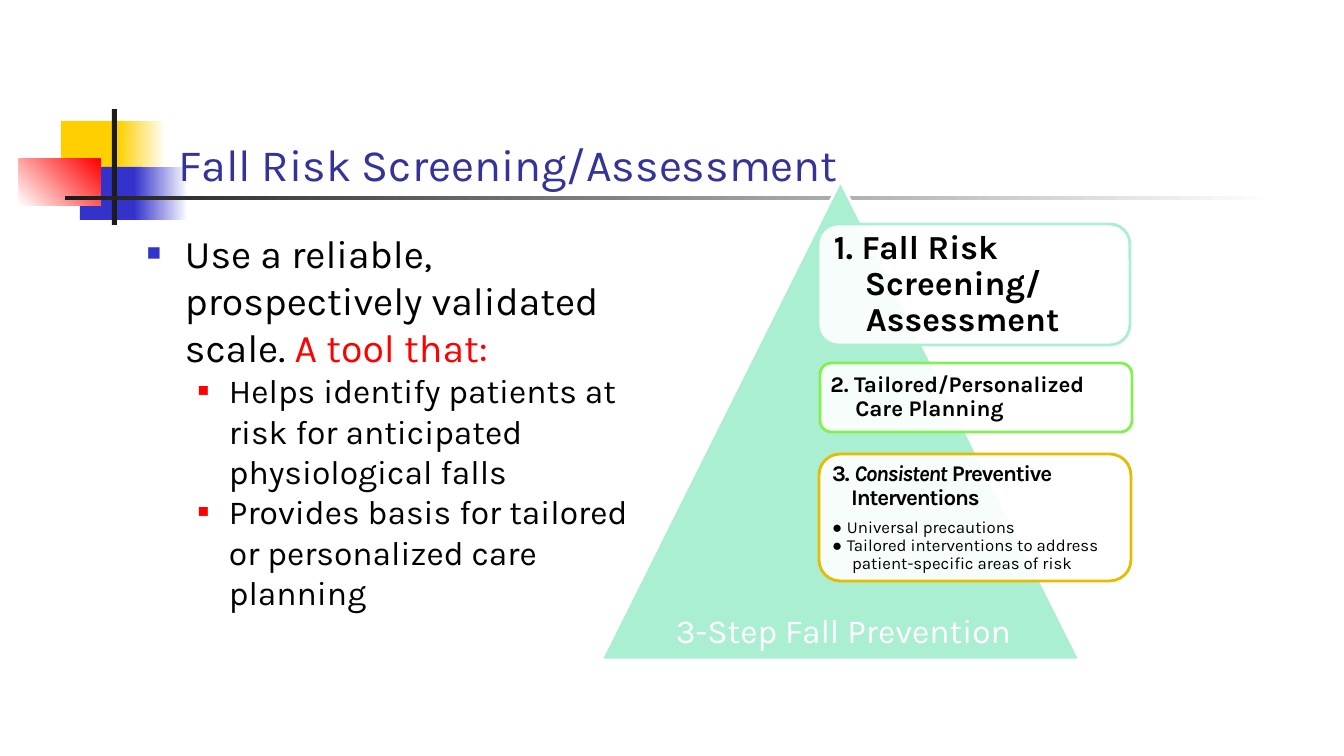
"""Build the fall risk screening and assessment slide."""
from dataclasses import dataclass

import pptx
import pptx.dml.color
import pptx.enum.shapes
import pptx.enum.text
import pptx.oxml
import pptx.oxml.ns
import pptx.util
from lxml import etree

SHAPE = pptx.enum.shapes.MSO_SHAPE
ALIGN = pptx.enum.text.PP_ALIGN
ANCHOR = pptx.enum.text.MSO_ANCHOR
qn = pptx.oxml.ns.qn
SCALE = 914400 / 100.8


@dataclass(frozen=True)
class Theme:
    font: str = "Karla"
    bullet_font: str = "Arial"
    white: str = "FFFFFF"
    black: str = "000000"
    charcoal: str = "1C1C1C"
    yellow: str = "FFCF01"
    blue: str = "3333CC"
    navy: str = "333399"
    red: str = "FF0000"
    mint: str = "AAEFD1"
    green: str = "83F051"
    gold: str = "E7BB01"
    title: int = 32
    lead: int = 28
    large: int = 24
    step: int = 16
    detail: int = 12
    outline: int = 2
    card_opacity: int = 90


T = Theme()

ORNAMENTS = [
    ((61, 121, 65, 52), [T.yellow], 0),
    ((118, 121, 48, 52), [T.yellow, T.white], 0),
    ((80, 167, 62, 53), [T.blue], 0),
    ((134, 167, 54, 53), [T.blue, T.white], 0),
    ((19, 159, 82, 47), [T.white, T.red], 45),
    ((112, 109, 5, 116), [T.charcoal], 0),
    ((65, 196, 1210, 4), [T.charcoal, T.white], 0),
]

TITLE = [{"runs": [("Fall Risk Screening/Assessment", {"color": T.navy})], "size": T.title}]

SUB_POINT = {"size": T.large, "indent": (82, -31), "bullet": (T.red, 55)}
GUIDANCE = [
    {"runs": [("Use a reliable, prospectively validated scale. ", {}),
              ("A tool that:", {"color": T.red})],
     "size": T.lead, "indent": (38, -38), "bullet": (T.blue, 60)},
    {"runs": [("Helps identify patients at risk for anticipated physiological falls", {})],
     **SUB_POINT},
    {"runs": [("Provides basis for tailored or personalized care planning", {})], **SUB_POINT},
]

BOLD = {"bold": True}
TIGHT = {"bold": True, "spacing": -80}
DOT = ("● ", {"font": T.bullet_font})
STEPS = [
    ((818, 224, 312, 121), T.mint, 10, [
        {"runs": [("1. Fall Risk Screening/", BOLD)],
         "size": T.large, "indent": (31, -31), "leading": 0.9},
        {"runs": [("Assessment", BOLD)],
         "size": T.large, "indent": (38, -6), "leading": 0.9},
    ]),
    ((820, 363, 312, 69), T.green, 7, [
        {"runs": [("2. Tailored/Personalized Care Planning", BOLD)],
         "size": T.step, "indent": (25, -25), "leading": 0.9},
    ]),
    ((819, 454, 312, 127), T.gold, 7, [
        {"runs": [("3. ", TIGHT), ("Consistent ", {**TIGHT, "italic": True}),
                  ("Preventive Interventions", TIGHT)],
         "size": T.step, "indent": (19, -19), "leading": 0.9, "after": 6},
        {"runs": [DOT, ("Universal precautions", {})], "size": T.detail, "leading": 0.9},
        {"runs": [DOT, ("Tailored interventions to address patient-specific areas of risk", {})],
         "size": T.detail, "indent": (20, -20), "leading": 0.9},
    ]),
]

PREVENTION = [{"runs": [("3-Step Fall Prevention", {"color": T.white})],
               "size": T.large, "align": ALIGN.CENTER}]


def px(length):
    return pptx.util.Emu(round(length * SCALE))


def rgb(code):
    return pptx.dml.color.RGBColor.from_string(code)


def add_block(slide, kind, box, colors, angle=0, outline=None):
    block = slide.shapes.add_shape(kind, *map(px, box))
    block.shadow.inherit = False
    if len(colors) == 1:
        block.fill.solid()
        block.fill.fore_color.rgb = rgb(colors[0])
    else:
        block.fill.gradient()
        block.fill.gradient_angle = angle
        for stop, color in zip(block.fill.gradient_stops, colors):
            stop.color.rgb = rgb(color)
    if outline:
        block.line.color.rgb = rgb(outline)
        block.line.width = pptx.util.Pt(T.outline)
    else:
        block.line.fill.background()
    return block


def set_bullet(props, color, percent):
    bullet_color = etree.SubElement(props, qn("a:buClr"))
    etree.SubElement(bullet_color, qn("a:srgbClr")).set("val", color)
    etree.SubElement(props, qn("a:buSzPct")).set("val", str(percent * 1000))
    etree.SubElement(props, qn("a:buFont")).set("typeface", T.bullet_font)
    etree.SubElement(props, qn("a:buChar")).set("char", "■")


def write(frame, paragraphs, inset=(10, 5), anchor=ANCHOR.TOP):
    frame.word_wrap = True
    frame.vertical_anchor = anchor
    frame.margin_left = frame.margin_right = px(inset[0])
    frame.margin_top = frame.margin_bottom = px(inset[1])
    for index, content in enumerate(paragraphs):
        paragraph = frame.add_paragraph() if index else frame.paragraphs[0]
        paragraph.alignment = content.get("align", ALIGN.LEFT)
        paragraph.line_spacing = content.get("leading", 1.0)
        paragraph.space_after = pptx.util.Pt(content.get("after", 0))
        props = paragraph._p.get_or_add_pPr()
        left, first = content.get("indent", (0, 0))
        props.set("marL", str(px(left)))
        props.set("indent", str(px(first)))
        if "bullet" in content:
            set_bullet(props, *content["bullet"])
        for text, style in content["runs"]:
            run = paragraph.add_run()
            run.text = text
            run.font.name = style.get("font", T.font)
            run.font.size = pptx.util.Pt(content["size"])
            run.font.color.rgb = rgb(style.get("color", T.black))
            run.font.bold = style.get("bold", False)
            run.font.italic = style.get("italic", False)
            if "spacing" in style:
                run.font._element.set("spc", str(style["spacing"]))


def add_text(slide, box, paragraphs, anchor=ANCHOR.TOP):
    write(slide.shapes.add_textbox(*map(px, box)).text_frame, paragraphs, anchor=anchor)


def add_step(slide, box, outline, inset, paragraphs):
    card = add_block(slide, SHAPE.ROUNDED_RECTANGLE, box, [T.white], outline=outline)
    fill_color = card.element.xpath("./p:spPr/a:solidFill/a:srgbClr")[0]
    etree.SubElement(fill_color, qn("a:alpha")).set("val", str(T.card_opacity * 1000))
    write(card.text_frame, paragraphs, (inset, inset), ANCHOR.MIDDLE)


def main():
    deck = pptx.Presentation()
    deck.slide_width, deck.slide_height = px(1344), px(756)
    slide = deck.slides.add_slide(deck.slide_layouts[6])
    for box, colors, angle in ORNAMENTS:
        add_block(slide, SHAPE.RECTANGLE, box, colors, angle)
    add_text(slide, (169, 69, 1145, 126), TITLE, ANCHOR.BOTTOM)
    add_text(slide, (137, 224, 501, 494), GUIDANCE)
    add_block(slide, SHAPE.ISOSCELES_TRIANGLE, (601, 181, 479, 479), [T.mint], outline=T.white)
    for step in STEPS:
        add_step(slide, *step)
    add_text(slide, (638, 605, 411, 40), PREVENTION)
    deck.save("out.pptx")


if __name__ == "__main__":
    main()
